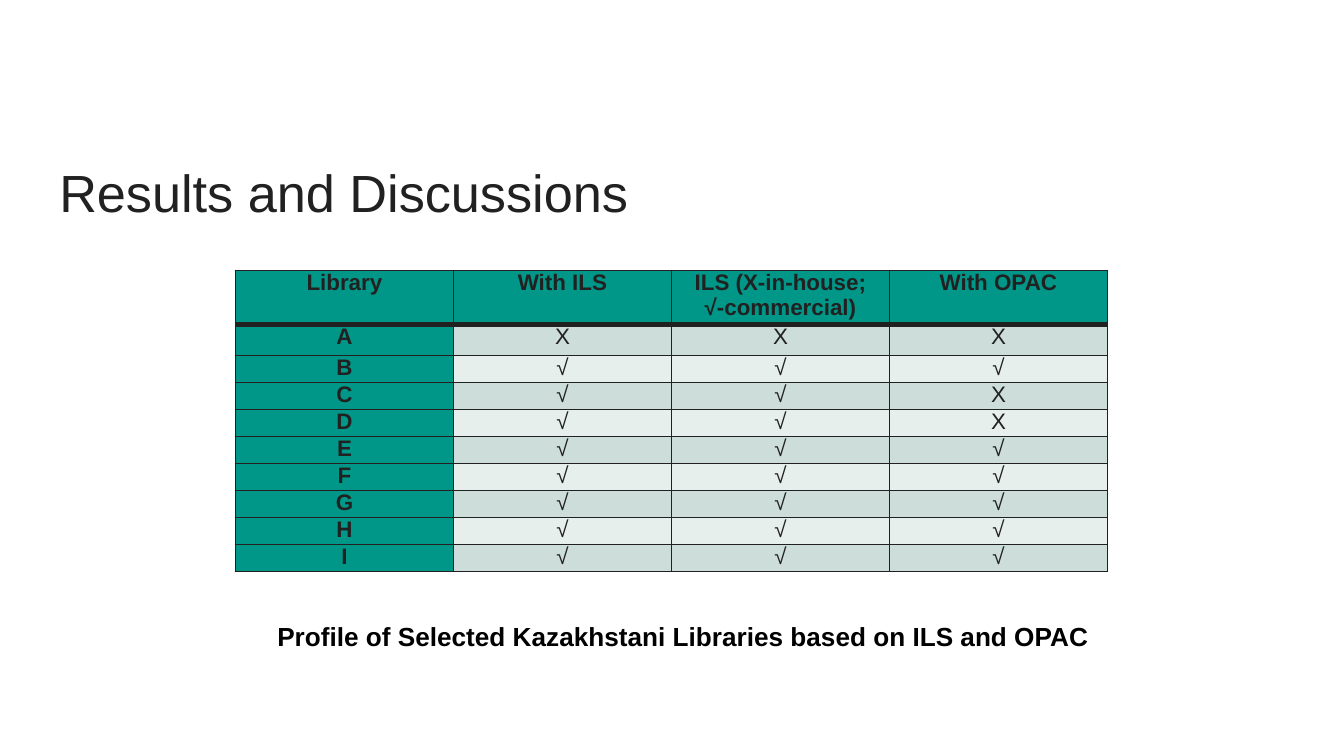
from lxml import etree
from pptx import Presentation
from pptx.dml.color import RGBColor
from pptx.enum.text import MSO_ANCHOR, PP_ALIGN
from pptx.oxml.ns import qn
from pptx.util import Cm, Pt

TOP = MSO_ANCHOR.TOP
LEFT, CENTER = PP_ALIGN.LEFT, PP_ALIGN.CENTER

# Content
TITLE = "Results and Discussions"
CAPTION = "Profile of Selected Kazakhstani Libraries based on ILS and OPAC"
HEAD = ["Library", "With ILS", "ILS (X-in-house;\n√-commercial)", "With OPAC"]
MARKS = {
    "A": "XXX", "B": "√√√", "C": "√√X", "D": "√√X", "E": "√√√",
    "F": "√√√", "G": "√√√", "H": "√√√", "I": "√√√",
}

# Look
FONT, INK, TEAL = "Arial", "212121", "009688"
BANDS = ["CCDDDA", "E7EFED"]
COL = 4.12
HIGH = [1.02, 0.59] + [0.51] * 8


def color(code):
    return RGBColor.from_string(code)


def write(frame, text, size, ink=INK, bold=False, align=CENTER):
    frame.text = text
    for para in frame.paragraphs:
        para.alignment = align
        font = para.font
        font.name, font.size, font.bold = FONT, Pt(size), bold
        font.color.rgb = color(ink)


def border(cell, widths):
    """Draw the left, right, top and bottom edges, widths in points."""
    props = cell._tc.get_or_add_tcPr()
    for spot, (side, width) in enumerate(zip("LRTB", widths)):
        line = etree.Element(qn(f"a:ln{side}"), w=str(Pt(width)))
        fill = etree.SubElement(line, qn("a:solidFill"))
        etree.SubElement(fill, qn("a:srgbClr"), val=INK)
        props.insert(spot, line)


# Slide
deck = Presentation()
deck.slide_width, deck.slide_height = Cm(25.4), Cm(14.29)
slide = deck.slides.add_slide(deck.slide_layouts[5])
back = slide.background.fill
back.solid()
back.fore_color.rgb = color("FFFFFF")

# Title
title = slide.shapes.title
title.left, title.top = Cm(0.87), Cm(2.77)
title.width, title.height = Cm(23.67), Cm(1.6)
frame = title.text_frame
frame.vertical_anchor = TOP
frame.margin_left = frame.margin_right = Cm(0.25)
frame.margin_top = frame.margin_bottom = Cm(0.25)
write(frame, TITLE, 28, align=LEFT)

# Table
rows = [HEAD] + [[name, *marks] for name, marks in MARKS.items()]
table = slide.shapes.add_table(
    len(rows), len(HEAD), Cm(4.45), Cm(5.11),
    Cm(COL * len(HEAD)), Cm(sum(HIGH))).table
for col in table.columns:
    col.width = Cm(COL)
for r, row in enumerate(rows):
    table.rows[r].height = Cm(HIGH[r])
    for c, text in enumerate(row):
        cell = table.cell(r, c)
        key = r == 0 or c == 0
        cell.margin_left = cell.margin_right = Cm(0.18)
        cell.margin_top = cell.margin_bottom = 0
        cell.fill.solid()
        cell.fill.fore_color.rgb = color(TEAL if key else BANDS[(r - 1) % 2])
        write(cell.text_frame, text, 12, bold=key)
        border(cell, [1, 1, 3 if r == 1 else 1, 3 if r == 0 else 1])

# Caption
box = slide.shapes.add_textbox(Cm(3.86), Cm(11.61), Cm(18.11), Cm(0.86))
box.text_frame.word_wrap = True
write(box.text_frame, CAPTION, 14, "000000", True)

deck.save("out.pptx")
